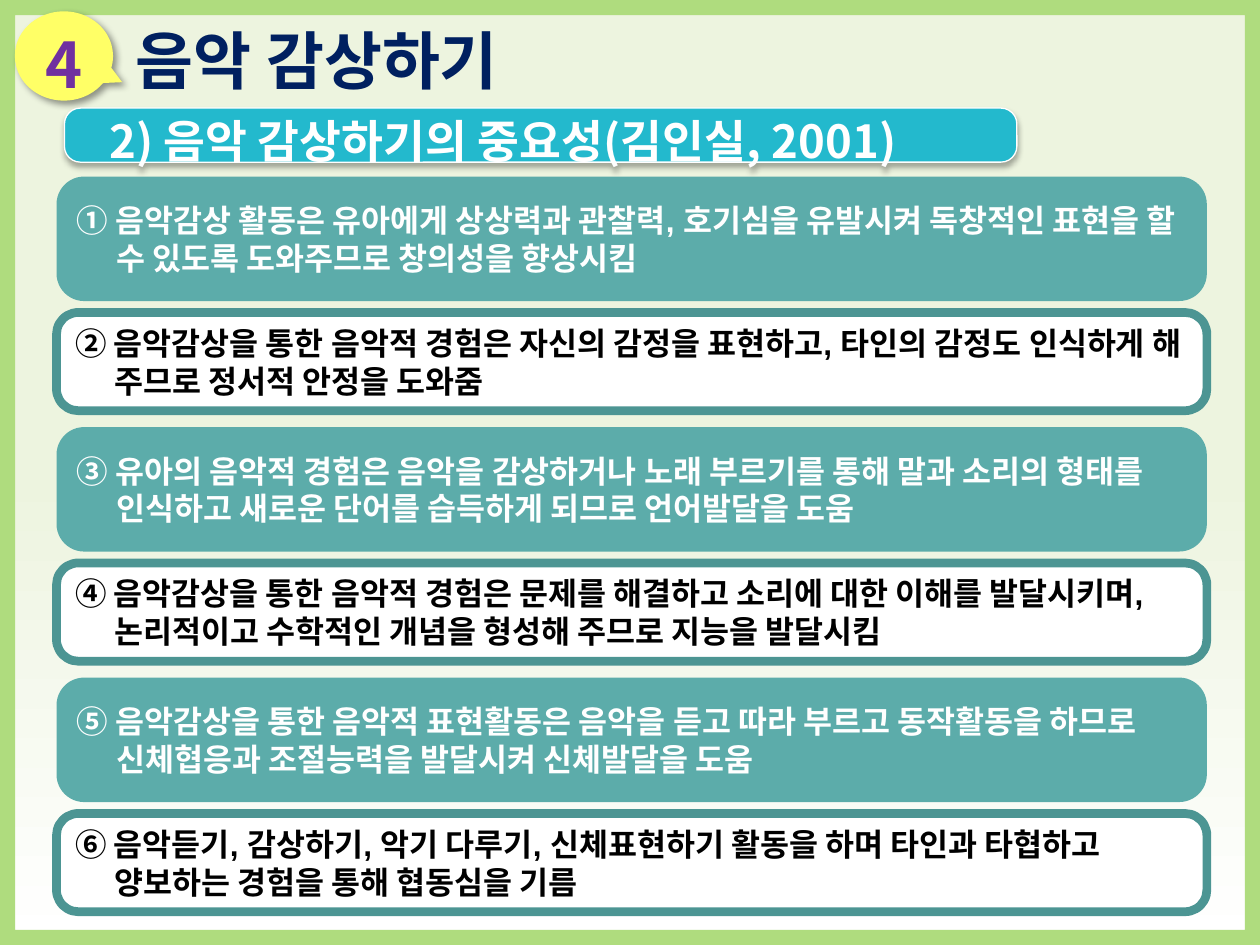
from lxml.etree import SubElement
from pptx import Presentation
from pptx.dml.color import RGBColor
from pptx.enum.shapes import MSO_SHAPE
from pptx.enum.text import MSO_ANCHOR, PP_ALIGN
from pptx.oxml.ns import qn
from pptx.util import Cm, Pt

NOTO = "Noto Sans CJK KR"
POINTS = [
    "① 음악감상 활동은 유아에게 상상력과 관찰력, 호기심을 유발시켜 독창적인 표현을 할 수 있도록 도와주므로 창의성을 향상시킴",
    "② 음악감상을 통한 음악적 경험은 자신의 감정을 표현하고, 타인의 감정도 인식하게 해 주므로 정서적 안정을 도와줌",
    "③ 유아의 음악적 경험은 음악을 감상하거나 노래 부르기를 통해 말과 소리의 형태를 인식하고 새로운 단어를 습득하게 되므로 언어발달을 도움",
    "④ 음악감상을 통한 음악적 경험은 문제를 해결하고 소리에 대한 이해를 발달시키며, 논리적이고 수학적인 개념을 형성해 주므로 지능을 발달시킴",
    "⑤ 음악감상을 통한 음악적 표현활동은 음악을 듣고 따라 부르고 동작활동을 하므로 신체협응과 조절능력을 발달시켜 신체발달을 도움",
    "⑥ 음악듣기, 감상하기, 악기 다루기, 신체표현하기 활동을 하며 타인과 타협하고 양보하는 경험을 통해 협동심을 기름",
]


def rgb(code):
    return RGBColor.from_string(code)


def add_box(slide, kind, at, fill=None, adj=(), line=None, width=0):
    box = slide.shapes.add_shape(kind, *[Cm(n) for n in at])
    box.shadow.inherit = False
    for i, value in enumerate(adj):
        box.adjustments[i] = value
    if fill:
        box.fill.solid()
        box.fill.fore_color.rgb = rgb(fill)
    if line:
        box.line.color.rgb = rgb(line)
        box.line.width = Pt(width)
    else:
        box.line.fill.background()
    return box


def add_shade(box, alpha, blur, dist, angle):
    effects = box._element.spPr.find(qn("a:effectLst"))
    shade = SubElement(effects, qn("a:outerShdw"), blurRad=str(Pt(blur)),
                       dist=str(Pt(dist)), dir=str(angle * 60000),
                       algn="ctr", rotWithShape="0")
    color = SubElement(shade, qn("a:srgbClr"), val="000000")
    SubElement(color, qn("a:alpha"), val=str(alpha * 1000))


def set_text(box, text, size, color, font=NOTO, align=PP_ALIGN.LEFT,
             pad=(0.25, 0.13), left=0, hang=0, space=1.0):
    frame = box.text_frame
    frame.text = text
    frame.word_wrap = True
    frame.vertical_anchor = MSO_ANCHOR.MIDDLE
    frame.margin_left = frame.margin_right = Cm(pad[0])
    frame.margin_top = frame.margin_bottom = Cm(pad[1])
    para = frame.paragraphs[0]
    para.alignment = align
    para.line_spacing = space
    if left:
        props = para._p.get_or_add_pPr()
        props.set("marL", str(Cm(left)))
        props.set("indent", str(Cm(-hang)))
    run = para.runs[0]
    run.font.size = Pt(size)
    run.font.bold = True
    run.font.color.rgb = rgb(color)
    run.font.name = font
    SubElement(run._r.get_or_add_rPr(), qn("a:ea"), typeface=NOTO)
    return para


def add_back(slide):
    page = (0, 0, 25.4, 19.05)
    back = add_box(slide, MSO_SHAPE.RECTANGLE, page)
    back.fill.gradient()
    back.fill.gradient_angle = 90
    stops = [(0, "FFFFFF"), (0.5, "EDF4DF")]
    for stop, (place, color) in zip(back.fill.gradient_stops, stops):
        stop.position = place
        stop.color.rgb = rgb(color)
    add_box(slide, MSO_SHAPE.FRAME, page, "AFDC7E", [0.016])


def add_head(slide):
    # Title and number bubble
    title = slide.shapes.add_textbox(Cm(2.49), Cm(0.23), Cm(22.6), Cm(1.93))
    set_text(title, "음악 감상하기", 36, "002060")
    bubble = add_box(slide, MSO_SHAPE.OVAL_CALLOUT, (0.3, 0.23, 1.98, 1.8),
                     "FFFF66", [0.592, 0.293])
    add_shade(bubble, 40, 4, 3, 45)
    set_text(bubble, "4", 36, "7030A0", align=PP_ALIGN.CENTER,
             pad=(0.1, 0.1), space=1.2)

    # Section bar
    bar = add_box(slide, MSO_SHAPE.ROUNDED_RECTANGLE, (1.3, 2.18, 19.2, 1.09),
                  "23B9CD", [0.294], "FFFFFF", 0.75)
    add_shade(bar, 32, 3.5, 2.2, 90)
    para = set_text(bar, "2) 음악 감상하기의 중요성(김인실, 2001)", 26, "FFFFFF",
                    pad=(0.61, 0.13), left=0.71, hang=0.51, space=1.2)
    para.space_after = Pt(12)


def add_point(slide, i, text):
    # Filled and outlined boxes take turns, one pair per step
    pair, second = divmod(i, 2)
    top = 3.56 + 5.05 * pair
    if second:
        look = ((1.14, top + 2.74, 23.19, 1.98), "FFFFFF", [0.222], "4C9593", 5)
    else:
        look = ((1.14, top, 23.19, 2.51), "5CACAA", [0.222])
    box = add_box(slide, MSO_SHAPE.ROUNDED_RECTANGLE, *look)
    set_text(box, text, 18, "000000" if second else "FFFFFF", "Arial",
             left=0.79, hang=0.79)


def main():
    deck = Presentation()
    deck.slide_width, deck.slide_height = Cm(25.4), Cm(19.05)
    slide = deck.slides.add_slide(deck.slide_layouts[6])
    add_back(slide)
    add_head(slide)
    for i, text in enumerate(POINTS):
        add_point(slide, i, text)
    deck.save("out.pptx")


if __name__ == "__main__":
    main()
